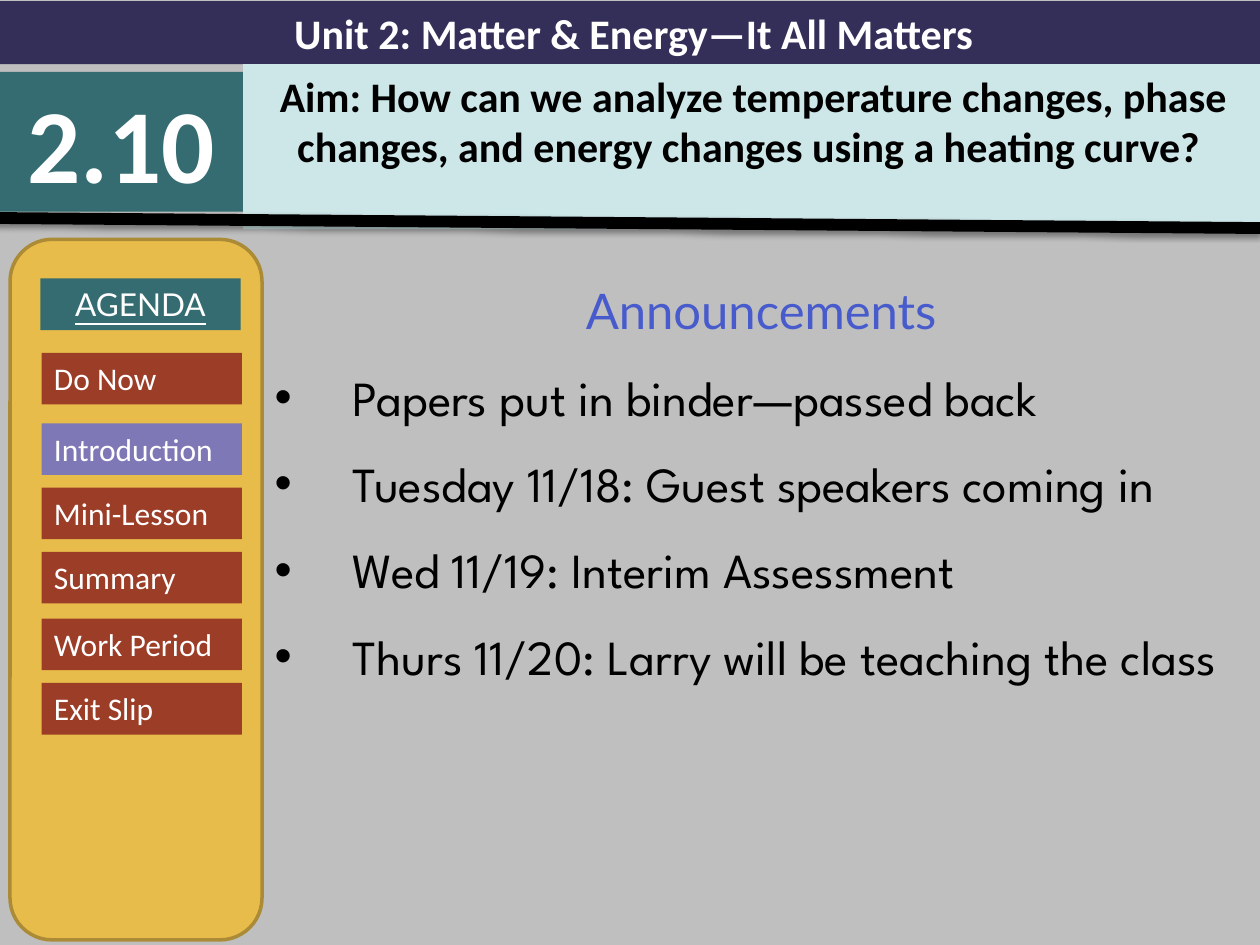
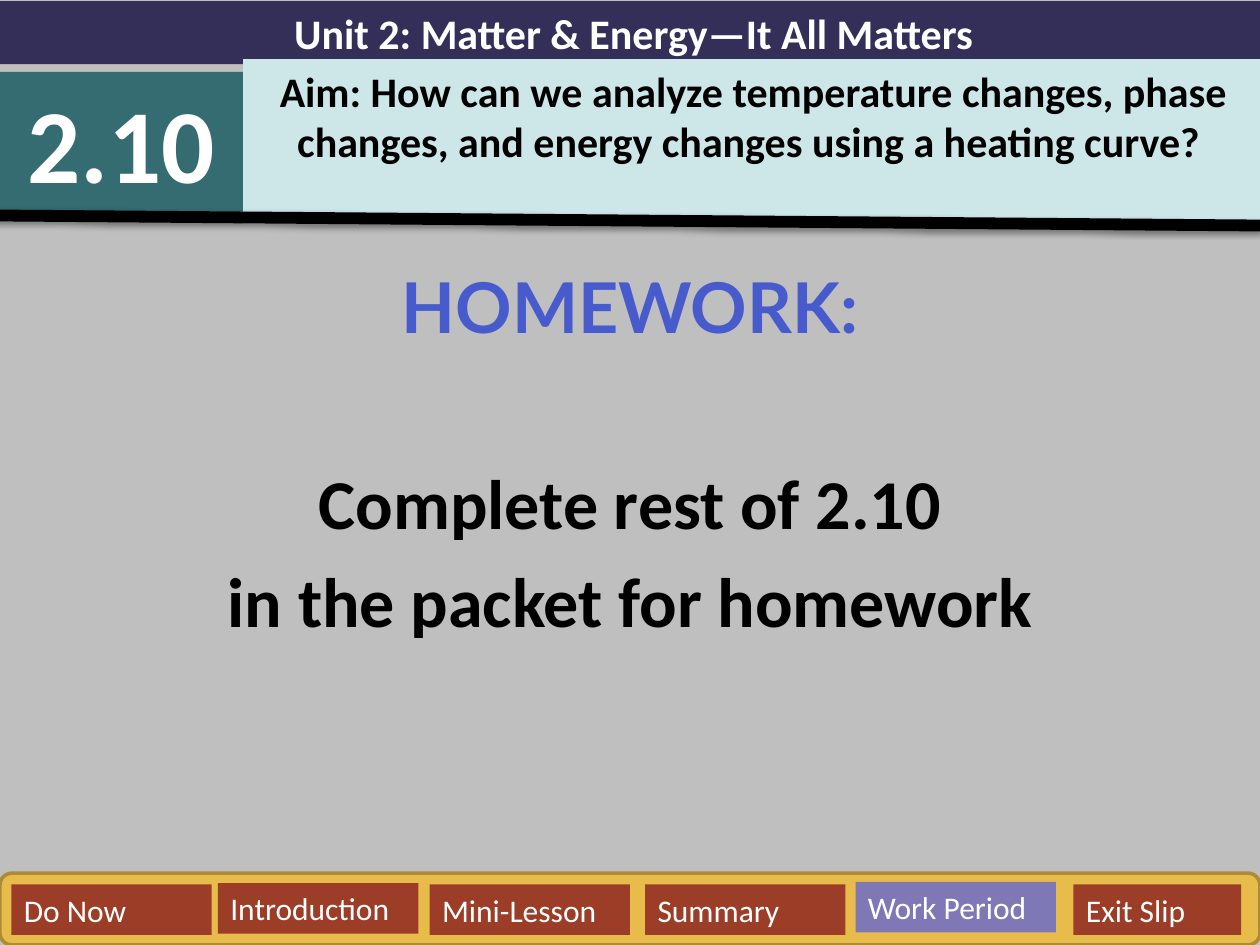
from dataclasses import dataclass
from typing import Any, Optional

from lxml import etree
from pptx import Presentation, util as u
from pptx.dml.color import RGBColor
from pptx.enum import shapes, text
from pptx.oxml import ns

CELL = u.Inches(0.1)  # the slide is a grid of 100 columns and 75 rows
COLUMNS, ROWS = 100, 75

BACKGROUND = RGBColor(0xBF, 0xBF, 0xBF)
NAVY = RGBColor(0x34, 0x2F, 0x59)
TEAL = RGBColor(0x34, 0x6C, 0x71)
PALE_TEAL = RGBColor(0xCD, 0xE6, 0xE8)
GOLD = RGBColor(0xE8, 0xBC, 0x4A)
DARK_GOLD = RGBColor(0xAC, 0x8B, 0x37)
BRICK = RGBColor(0x9C, 0x3D, 0x28)
VIOLET = RGBColor(0x7E, 0x78, 0xB7)
BLUE = RGBColor(0x47, 0x5B, 0xCD)
BLACK = RGBColor(0, 0, 0)
WHITE = RGBColor(0xFF, 0xFF, 0xFF)

UNIT = "Unit 2: Matter & Energy—It All Matters"
LESSON = "2.10"
AIM = ("Aim: How can we analyze temperature changes, phase changes, "
       "and energy changes using a heating curve? ")
STEPS = ("Do Now", "Introduction", "Mini-Lesson", "Summary", "Work Period", "Exit Slip")

LEFT, CENTER = text.PP_ALIGN.LEFT, text.PP_ALIGN.CENTER


@dataclass(frozen=True)
class Box:
    """A place on the grid, in columns and rows."""
    column: float
    row: float
    columns: float
    rows: float


@dataclass(frozen=True)
class Style:
    size: float
    color: RGBColor
    name: str = "Calibri"
    bold: bool = False
    underline: bool = False
    align: Any = CENTER


@dataclass(frozen=True)
class Line:
    """One paragraph of a slide's body."""
    words: str
    style: Style
    spacing: float = 1.0
    bullet: bool = False
    extra_before: float = 0


@dataclass(frozen=True)
class Lesson:
    aim_row: float
    rule_row: float
    body: Box
    lines: tuple[Line, ...]
    panel: Box
    buttons: tuple[Box, ...]
    current: str
    heading: Optional[Box] = None


BAND_STYLE = Style(24, WHITE, bold=True)
AIM_STYLE = Style(24, BLACK, bold=True)
NUMBER_STYLE = Style(60, WHITE, bold=True)
AGENDA_STYLE = Style(18, WHITE, "Lato", underline=True)
BUTTON_STYLE = Style(18, WHITE, align=LEFT)
ITEM_STYLE = Style(28, BLACK, "League Spartan", align=LEFT)
HOMEWORK_STYLE = Style(40, BLACK, bold=True)

ANNOUNCEMENTS = (
    "Papers put in binder—passed back",
    "Tuesday 11/18: Guest speakers coming in",
    "Wed 11/19: Interim Assessment",
    "Thurs 11/20: Larry will be teaching the class",
)

LESSONS = (
    Lesson(
        aim_row=5.1, rule_row=17.3,
        body=Box(20.8, 20.4, 79.2, 54.6),
        lines=(Line("Announcements", Style(28, BLUE, "Lato"), 1.3),
               *(Line(item, ITEM_STYLE, 1.3, True) for item in ANNOUNCEMENTS)),
        panel=Box(0.8, 19, 20, 55.6),
        buttons=tuple(Box(3.3, row, 15.9, 4.1)
                      for row in (28, 33.6, 38.7, 43.8, 49.1, 54.2)),
        current="Introduction",
        heading=Box(3.2, 22.1, 15.9, 4.1),
    ),
    Lesson(
        aim_row=4.7, rule_row=17.1,
        body=Box(0, 20.4, COLUMNS, 54.6),
        lines=(Line("HOMEWORK:", Style(40, BLUE, "Lato", bold=True)),
               Line("Complete rest of 2.10", HOMEWORK_STYLE, extra_before=56),
               Line("in the packet for homework", HOMEWORK_STYLE)),
        panel=Box(0, 69.3, COLUMNS, 5.7),
        buttons=tuple(Box(column, row, columns, 4) for column, row, columns in (
            (0.9, 70.2, 15.9), (17.3, 70.1, 15.9), (34.1, 70.2, 15.9),
            (51.2, 70.2, 15.9), (67.9, 70, 15.9), (85.2, 70.2, 13.3))),
        current="Work Period",
    ),
)


def grid(cells: float) -> u.Emu:
    return u.Emu(round(cells * CELL))


def place(shape: Any, box: Box) -> None:
    lengths = {"left": box.column, "top": box.row,
               "width": box.columns, "height": box.rows}
    for name, cells in lengths.items():
        setattr(shape, name, grid(cells))


def write(paragraph: Any, words: str, style: Style) -> None:
    paragraph.alignment = style.align
    run = paragraph.add_run()
    run.text = words
    formats = {"name": style.name, "size": u.Pt(style.size),
               "bold": style.bold, "underline": style.underline}
    for name, value in formats.items():
        setattr(run.font, name, value)
    run.font.color.rgb = style.color


def prepare_frame(shape: Any) -> Any:
    frame = shape.text_frame
    formats = {"word_wrap": True, "auto_size": text.MSO_AUTO_SIZE.NONE,
               "vertical_anchor": text.MSO_ANCHOR.TOP}
    for name, value in formats.items():
        setattr(frame, name, value)
    return frame


def paint(shape: Any, color: RGBColor) -> None:
    shape.fill.solid()
    shape.fill.fore_color.rgb = color


def add_block(container: Any, box: Box, color: RGBColor, words: str, style: Style) -> None:
    block = container.add_shape(shapes.MSO_SHAPE.RECTANGLE, 0, 0, 0, 0)
    place(block, box)
    paint(block, color)
    block.line.fill.background()
    block.shadow.inherit = False
    write(prepare_frame(block).paragraphs[0], words, style)


def add_rule(slide: Any, row: float) -> None:
    """Draw the slanting black line with its soft shadow."""
    rule = slide.shapes.add_connector(shapes.MSO_CONNECTOR.STRAIGHT, grid(-0.5),
                                      grid(row), grid(COLUMNS), grid(row + 0.8))
    rule.line.color.rgb = BLACK
    rule.line.width = u.Pt(6.75)
    effects = etree.SubElement(rule.element.spPr, ns.qn("a:effectLst"))
    shadow = etree.SubElement(effects, ns.qn("a:outerShdw"), blurRad=str(u.Pt(3.1)),
                              dist=str(u.Pt(1.6)), dir="5400000", rotWithShape="0")
    color = etree.SubElement(shadow, ns.qn("a:srgbClr"), val=str(BLACK))
    etree.SubElement(color, ns.qn("a:alpha"), val="38000")


def add_header(slide: Any, lesson: Lesson) -> None:
    add_block(slide.shapes, Box(0, 0.1, 100.6, 5), NAVY, UNIT, BAND_STYLE)
    add_block(slide.shapes, Box(0, 5.7, 19.3, 11.1), TEAL, LESSON, NUMBER_STYLE)
    title = slide.shapes.title
    title.element.getparent().append(title.element)  # in front of the bands
    place(title, Box(19.3, lesson.aim_row, 81, 13.1))
    paint(title, PALE_TEAL)
    write(prepare_frame(title).paragraphs[0], AIM, AIM_STYLE)
    add_rule(slide, lesson.rule_row)


def fill_body(body: Any, lesson: Lesson) -> None:
    place(body, lesson.body)
    frame = prepare_frame(body)
    for index, line in enumerate(lesson.lines):
        paragraph = frame.add_paragraph() if index else frame.paragraphs[0]
        write(paragraph, line.words, line.style)
        paragraph.line_spacing = line.spacing
        paragraph.space_before = u.Pt(0.2 * line.style.size + line.extra_before)
        properties = paragraph._p.get_or_add_pPr()
        indent = grid(6.2) if line.bullet else 0
        properties.set("marL", str(indent))
        properties.set("indent", str(-indent))
        if line.bullet:
            etree.SubElement(properties, ns.qn("a:buChar"), char="•")
        else:
            etree.SubElement(properties, ns.qn("a:buNone"))


def add_agenda(slide: Any, lesson: Lesson) -> None:
    agenda = slide.shapes.add_group_shape().shapes
    panel = agenda.add_shape(shapes.MSO_SHAPE.ROUNDED_RECTANGLE, 0, 0, 0, 0)
    place(panel, lesson.panel)
    paint(panel, GOLD)
    panel.line.color.rgb = DARK_GOLD
    panel.line.width = u.Pt(2)
    panel.shadow.inherit = False
    if lesson.heading:
        add_block(agenda, lesson.heading, TEAL, "AGENDA", AGENDA_STYLE)
    for step, box in zip(STEPS, lesson.buttons):
        color = VIOLET if step == lesson.current else BRICK
        add_block(agenda, box, color, step, BUTTON_STYLE)
    # Resize the group to the shapes now that all of them are placed
    slide.shapes[-1].shapes._recalculate_extents()


def build_slide(presentation: Any, lesson: Lesson) -> None:
    slide = presentation.slides.add_slide(presentation.slide_layouts[1])
    paint(slide.background, BACKGROUND)
    fill_body(slide.placeholders[1], lesson)
    add_header(slide, lesson)
    add_agenda(slide, lesson)


def main() -> None:
    presentation = Presentation()
    presentation.slide_width = grid(COLUMNS)
    presentation.slide_height = grid(ROWS)
    for lesson in LESSONS:
        build_slide(presentation, lesson)
    presentation.save("out.pptx")


if __name__ == "__main__":
    main()
